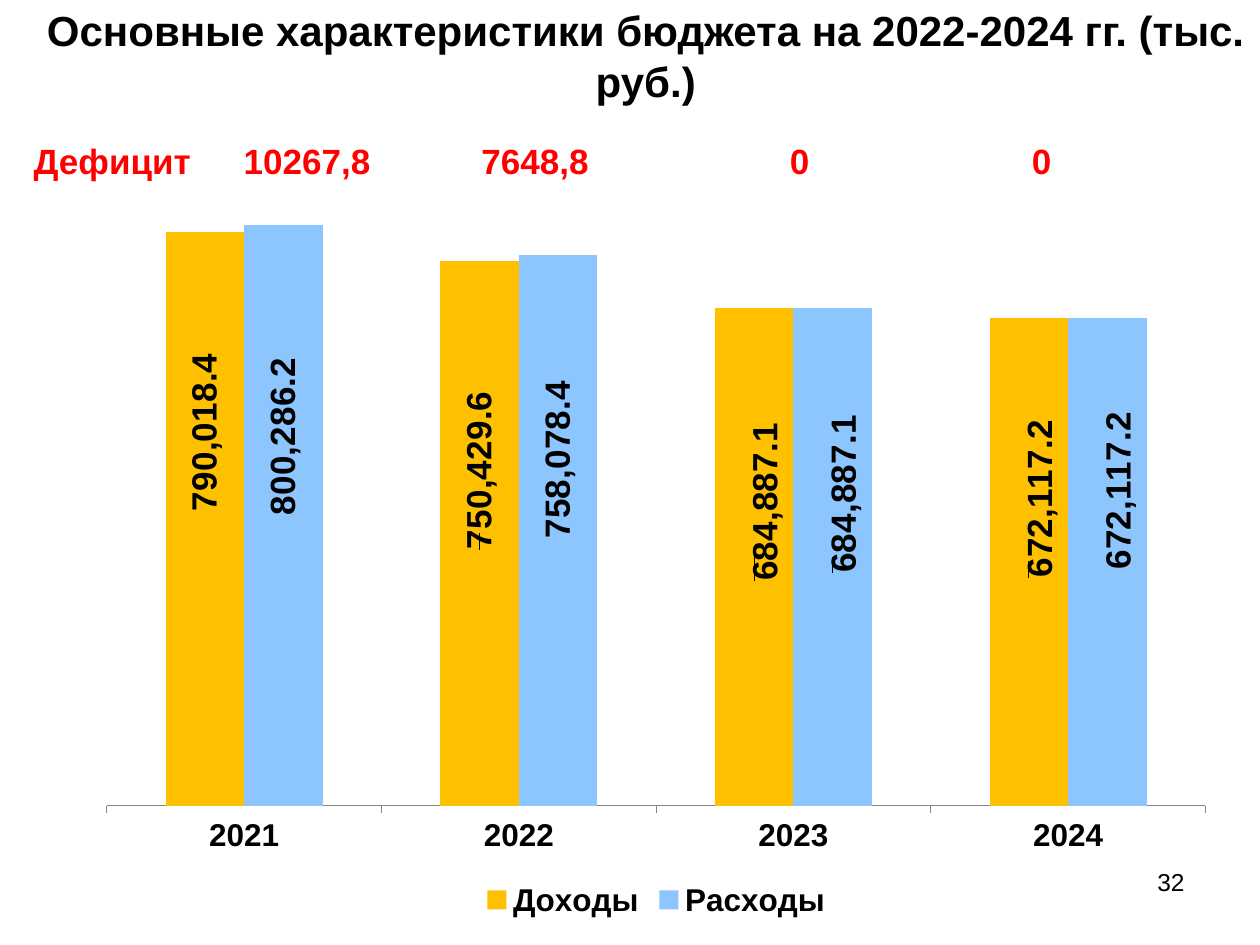
from pptx import Presentation
from pptx.chart.data import CategoryChartData
from pptx.dml.color import RGBColor
from pptx.enum.chart import XL_CHART_TYPE, XL_LEGEND_POSITION, XL_TICK_LABEL_POSITION, XL_TICK_MARK
from pptx.enum.text import MSO_ANCHOR, PP_ALIGN
from pptx.oxml import parse_xml
from pptx.oxml.ns import nsdecls
from pptx.util import Pt

COLUMNS = XL_CHART_TYPE.COLUMN_CLUSTERED
BOTTOM = XL_LEGEND_POSITION.BOTTOM
NO_LABELS = XL_TICK_LABEL_POSITION.NONE
TICK_OUT, TICK_NONE = XL_TICK_MARK.OUTSIDE, XL_TICK_MARK.NONE
TOP, MIDDLE = MSO_ANCHOR.TOP, MSO_ANCHOR.MIDDLE
LEFT, CENTER, RIGHT = PP_ALIGN.LEFT, PP_ALIGN.CENTER, PP_ALIGN.RIGHT

FONT = "Arial"
BLACK, WHITE, RED = "000000", "FFFFFF", "FF0000"
NUMBER_FORMAT = "#,##0.0"

YEARS = ["2021", "2022", "2023", "2024"]
# name, colour, values, label shifts from the bar centre (fractions of the chart)
SERIES = [
    ("Доходы", "FFC000", [790018.4, 750429.6, 684887.1, 672117.2],
     [(0, -0.11), (0, -0.08), (0.01, -0.07), (0.01, -0.08)]),
    ("Расходы", "8DC6FF", [800286.2, 758078.4, 684887.1, 672117.2],
     [(0, -0.1), (0, -0.09), (0.01, -0.08), (0.01, -0.09)]),
]
DEFICIT = ["Дефицит", "10267,8", "7648,8", "0", "0"]
DEFICIT_WIDTHS = [111, 105, 155.5, 147, 129.5]


def rgb(value):
    return RGBColor.from_string(value)


def set_font(font, size, color=BLACK, bold=False):
    for name, value in {"name": FONT, "size": Pt(size), "bold": bold}.items():
        setattr(font, name, value)
    font.color.rgb = rgb(color)


def write(tf, text, size, align, color=BLACK, bold=False):
    p = tf.paragraphs[0]
    p.alignment = align
    r = p.add_run()
    r.text = text
    set_font(r.font, size, color, bold)


def add_text(s, box, text, size, align, anchor=TOP, bold=False):
    tf = s.shapes.add_textbox(*map(Pt, box)).text_frame
    tf.word_wrap = True
    tf.vertical_anchor = anchor
    write(tf, text, size, align, bold=bold)


def manual_layout(x, y, size=""):
    return f'<c:layout><c:manualLayout>{size}<c:x val="{x}"/><c:y val="{y}"/></c:manualLayout></c:layout>'


def add_labels(series, shifts):
    """Give each bar a vertical value label, shifted from the bar's centre."""
    fmt = f'<c:numFmt formatCode="{NUMBER_FORMAT}" sourceLinked="0"/>'
    text = ('<c:txPr><a:bodyPr rot="-5400000" vert="horz"/><a:p><a:pPr><a:defRPr sz="2000" b="1">'
            f'<a:solidFill><a:srgbClr val="{BLACK}"/></a:solidFill><a:latin typeface="{FONT}"/>'
            '</a:defRPr></a:pPr><a:endParaRPr lang="ru-RU"/></a:p></c:txPr>')
    show = '<c:dLblPos val="ctr"/><c:showLegendKey val="0"/><c:showVal val="1"/>' + "".join(
        f'<c:show{part} val="0"/>' for part in ("CatName", "SerName", "Percent", "BubbleSize"))
    style = fmt + "<c:spPr><a:noFill/></c:spPr>" + text + show
    points = "".join(f'<c:dLbl><c:idx val="{i}"/>{manual_layout(*shift)}{style}</c:dLbl>'
                     for i, shift in enumerate(shifts))
    labels = parse_xml(f'<c:dLbls {nsdecls("c", "a")}>{points}{style}</c:dLbls>')
    old = series.data_labels._element
    old.getparent().replace(old, labels)


def place_plot(chart, x, y, w, h):
    """Fix the inner plot area, in fractions of the chart."""
    area = chart._chartSpace.chart.plotArea
    for old in area.findall("{*}layout"):
        area.remove(old)
    area.insert(0, parse_xml(
        f'<c:layout {nsdecls("c")}><c:manualLayout><c:layoutTarget val="inner"/>'
        '<c:xMode val="edge"/><c:yMode val="edge"/>'
        f'<c:x val="{x}"/><c:y val="{y}"/><c:w val="{w}"/><c:h val="{h}"/>'
        '</c:manualLayout></c:layout>'))


def add_budget_chart(s, box):
    data = CategoryChartData(number_format=NUMBER_FORMAT)
    data.categories = YEARS
    for name, _, values, _ in SERIES:
        data.add_series(name, values)
    chart = s.shapes.add_chart(COLUMNS, *map(Pt, box), data).chart
    set_font(chart.font, 18)
    chart.has_title = False
    chart.has_legend = True
    chart.legend.position = BOTTOM
    chart.legend.include_in_layout = False
    set_font(chart.legend.font, 18, bold=True)

    years = chart.category_axis
    years.major_tick_mark = TICK_OUT
    years.format.line.color.rgb = rgb("868686")
    set_font(years.tick_labels.font, 18, bold=True)
    amounts = chart.value_axis
    for name, value in {"minimum_scale": 200, "maximum_scale": 900000,
                        "has_major_gridlines": False, "major_tick_mark": TICK_NONE,
                        "tick_label_position": NO_LABELS, "visible": False}.items():
        setattr(amounts, name, value)

    plot = chart.plots[0]
    plot.gap_width, plot.overlap = 150, 0
    plot.vary_by_categories = False
    for series, (_, color, _, shifts) in zip(plot.series, SERIES):
        series.format.fill.solid()
        series.format.fill.fore_color.rgb = rgb(color)
        add_labels(series, shifts)
    place_plot(chart, 0.02, 0.02, 0.96, 0.83)


def add_deficit_row(s, box):
    table = s.shapes.add_table(1, len(DEFICIT), *map(Pt, box)).table
    table.first_row = table.horz_banding = False
    for i, (text, width) in enumerate(zip(DEFICIT, DEFICIT_WIDTHS)):
        table.columns[i].width = Pt(width)
        cell = table.cell(0, i)
        cell.fill.solid()
        cell.fill.fore_color.rgb = rgb(WHITE)
        write(cell.text_frame, text, 20, CENTER if i else LEFT, RED, True)


def main():
    prs = Presentation()
    prs.slide_width, prs.slide_height = Pt(720), Pt(540)
    s = prs.slides.add_slide(prs.slide_layouts[6])
    add_text(s, (18, 18, 702, 27), "Основные характеристики бюджета на 2022-2024 гг. (тыс. руб.)",
             24, CENTER, MIDDLE, True)
    add_budget_chart(s, (48, 78, 654, 450))
    add_text(s, (516, 492, 168, 37.5), "32", 14, RIGHT)
    add_deficit_row(s, (12, 78, 648, 30.5))
    prs.save("out.pptx")


if __name__ == "__main__":
    main()
